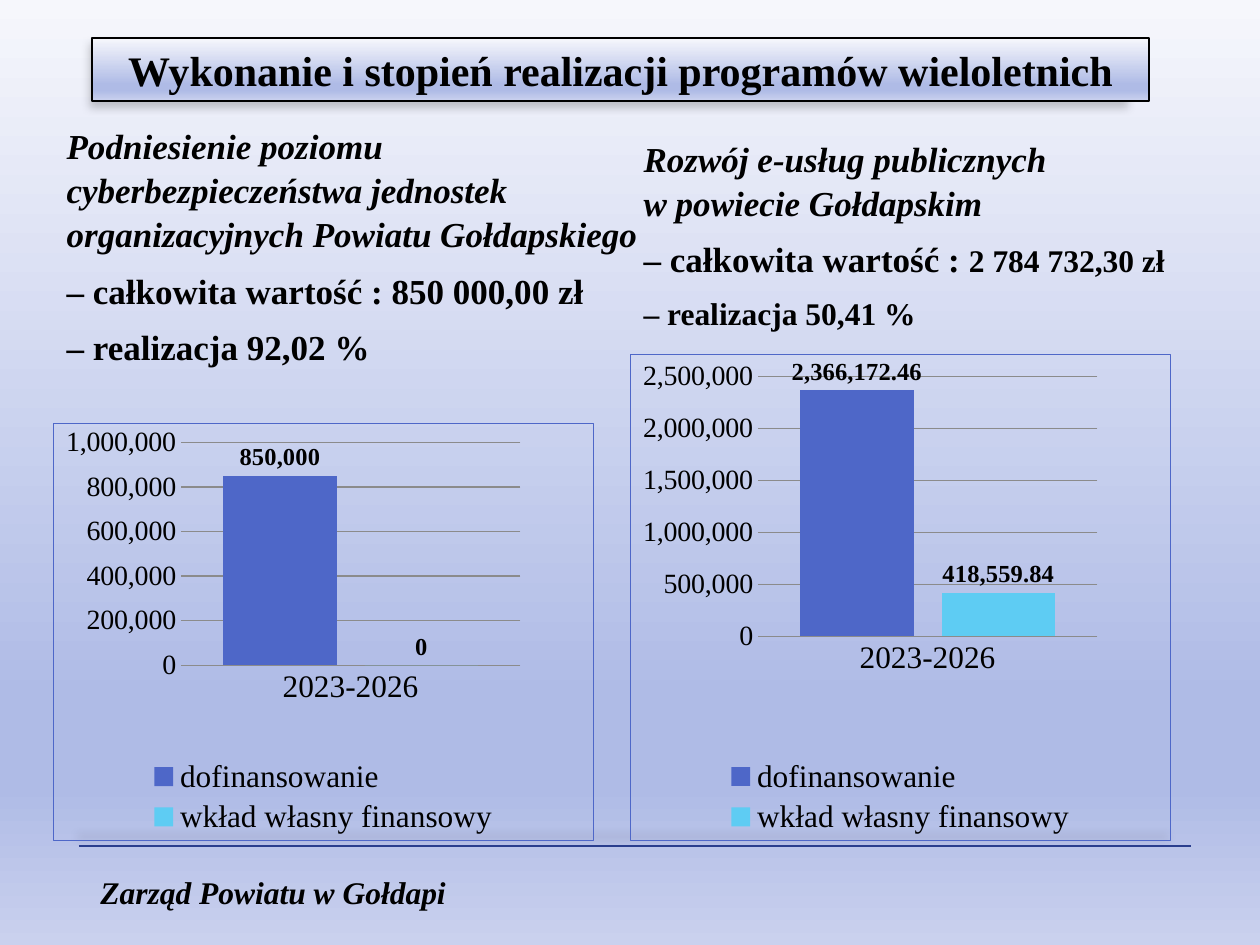
from lxml import etree
from pptx import Presentation
from pptx import util as u
from pptx.chart.data import CategoryChartData
from pptx.dml.color import RGBColor
from pptx.enum import chart as charts, shapes, text
from pptx.oxml import parse_xml
from pptx.oxml.ns import nsdecls, qn

PX = 914400 / 126
FONT = "Times New Roman"
BLACK, BLUE, CYAN, NAVY, GREY = "000000", "4E67C8", "5ECCF3", "2A3E8E", "8B8B8B"
STOPS = [(0, "F6F7FC"), (74, "AFBBE6"), (83, "AFBBE6"), (100, "CAD1EE")]
PLOT = {"x": 0.236, "y": 0.045, "w": 0.629, "h": 0.535}


def px(value):
    return u.Emu(round(value * PX))


def colour(code):
    return RGBColor.from_string(code)


def place(shape, left, top, width, height):
    shape.left, shape.top, shape.width, shape.height = map(px, (left, top, width, height))


def style_font(font, size, bold=False, italic=False):
    font.name, font.size, font.bold, font.italic = FONT, u.Pt(size), bold, italic
    font.color.rgb = colour(BLACK)


def style_line(line, code, width):
    line.color.rgb = colour(code)
    line.width = u.Pt(width)


def paint_gradient(fill, element):
    fill.gradient()
    fill.gradient_angle = 270
    stop_list = element.find(".//" + qn("a:gsLst"))
    for stop in list(stop_list):
        stop_list.remove(stop)
    for position, code in STOPS:
        stop = etree.SubElement(stop_list, qn("a:gs"), pos=str(position * 1000))
        etree.SubElement(stop, qn("a:srgbClr"), val=code)


def add_shadow(shape):
    shape._element.spPr.append(parse_xml(
        f'<a:effectLst {nsdecls("a")}><a:outerShdw blurRad="63500" dist="50800" dir="5400000" '
        'sx="98000" sy="98000" algn="ctr" rotWithShape="0"><a:srgbClr val="000000">'
        '<a:alpha val="20000"/></a:srgbClr></a:outerShdw></a:effectLst>'))


def fill_title(title, wording):
    place(title, 92, 38, 1057, 63)
    paint_gradient(title.fill, title._element)
    style_line(title.line, BLACK, 0.75)
    add_shadow(title)
    title.text_frame.text = wording
    title.text_frame.auto_size = text.MSO_AUTO_SIZE.NONE
    para = title.text_frame.paragraphs[0]
    para.alignment = text.PP_ALIGN.CENTER
    style_font(para.runs[0].font, 24, bold=True)


def fill_body(body, box, paragraphs):
    place(body, *box)
    frame = body.text_frame
    frame.auto_size = text.MSO_AUTO_SIZE.NONE
    frame.vertical_anchor = text.MSO_ANCHOR.BOTTOM
    for index, (italic, spans) in enumerate(paragraphs):
        para = frame.paragraphs[0] if index == 0 else frame.add_paragraph()
        properties = para._p.get_or_add_pPr()
        properties.set("marL", "0")
        properties.set("indent", "0")
        etree.SubElement(properties, qn("a:buNone"))
        para.alignment = text.PP_ALIGN.LEFT
        para.line_spacing = 1.05
        para.space_before = u.Pt(4 if index else 0)
        para.space_after = u.Pt(3)
        for wording, size in spans:
            for number, line in enumerate(wording.split("\n")):
                if number:
                    para.add_line_break()
                span = para.add_run()
                span.text = line
                style_font(span.font, size, bold=True, italic=italic)


def add_label(slide, box, wording):
    label = slide.shapes.add_textbox(*map(px, box))
    label.text_frame.word_wrap = True
    label.text_frame.text = wording
    style_font(label.text_frame.paragraphs[0].runs[0].font, 18, bold=True, italic=True)


def add_rule(slide, left, right, top):
    rule = slide.shapes.add_connector(
        shapes.MSO_CONNECTOR.STRAIGHT, px(left), px(top), px(right), px(top))
    style_line(rule.line, NAVY, 1.25)
    add_shadow(rule)


def set_plot_layout(chart):
    area = chart._chartSpace.chart.plotArea
    for old in area.findall(qn("c:layout")):
        area.remove(old)
    layout = etree.Element(qn("c:layout"))
    manual = etree.SubElement(layout, qn("c:manualLayout"))
    etree.SubElement(manual, qn("c:layoutTarget"), val="inner")
    for side in "xy":
        etree.SubElement(manual, qn(f"c:{side}Mode"), val="edge")
    for side, share in PLOT.items():
        etree.SubElement(manual, qn(f"c:{side}"), val=str(share))
    area.insert(0, layout)


def add_border(chart):
    chart._chartSpace.find(qn("c:txPr")).addprevious(parse_xml(
        f'<c:spPr {nsdecls("c", "a")}><a:noFill/><a:ln w="9525"><a:solidFill>'
        f'<a:srgbClr val="{BLUE}"/></a:solidFill></a:ln></c:spPr>'))


def style_axes(chart, maximum, step):
    category, value = chart.category_axis, chart.value_axis
    for axis, size in ((category, 18), (value, 16)):
        axis.major_tick_mark = axis.minor_tick_mark = charts.XL_TICK_MARK.NONE
        style_font(axis.tick_labels.font, size)
    style_line(category.format.line, GREY, 0.75)
    value.format.line.fill.background()
    value.minimum_scale, value.maximum_scale, value.major_unit = 0, maximum, step
    value.tick_labels.number_format = "#,##0"
    value.tick_labels.number_format_is_linked = False
    value.has_major_gridlines = True
    style_line(value.major_gridlines.format.line, GREY, 0.75)


def add_funding_chart(slide, box, values, maximum, step, label_format):
    data = CategoryChartData()
    data.categories = ["2023-2026"]
    for name, value in zip(("dofinansowanie", "wkład własny finansowy"), values):
        data.add_series(name, [value])
    chart = slide.shapes.add_chart(
        charts.XL_CHART_TYPE.COLUMN_CLUSTERED, *map(px, box), data).chart
    chart.has_title = False
    style_font(chart.font, 10)
    add_border(chart)
    set_plot_layout(chart)
    style_axes(chart, maximum, step)
    chart.has_legend = True
    chart.legend.position = charts.XL_LEGEND_POSITION.BOTTOM
    chart.legend.include_in_layout = False
    style_font(chart.legend.font, 18)
    plot = chart.plots[0]
    plot.vary_by_categories = False
    plot.gap_width, plot.overlap = 75, -25
    for series, code in zip(plot.series, (BLUE, CYAN)):
        series.format.fill.solid()
        series.format.fill.fore_color.rgb = colour(code)
        labels = series.data_labels
        labels.show_value = True
        labels.position = charts.XL_LABEL_POSITION.OUTSIDE_END
        labels.number_format = label_format
        labels.number_format_is_linked = False
        style_font(labels.font, 14, bold=True)


def main():
    deck = Presentation()
    deck.slide_width, deck.slide_height = px(1260), px(945)
    slide = deck.slides.add_slide(deck.slide_layouts[3])
    paint_gradient(slide.background.fill, slide._element)
    title, left_body, right_body = slide.placeholders
    fill_title(title, "Wykonanie i stopień realizacji programów wieloletnich")
    fill_body(left_body, (54, 132, 635, 242), [
        (True, [("Podniesienie poziomu cyberbezpieczeństwa jednostek "
                 "organizacyjnych Powiatu Gołdapskiego", 20)]),
        (False, [("– całkowita wartość : 850 000,00 zł", 20)]),
        (False, [("– realizacja 92,02 %", 20)]),
    ])
    fill_body(right_body, (631, 103, 560, 235), [
        (True, [("Rozwój e-usług publicznych\nw powiecie Gołdapskim", 20)]),
        (False, [("– całkowita wartość : ", 20), ("2 784 732,30 zł", 18)]),
        (False, [("– realizacja 50,41 %", 18)]),
    ])
    add_rule(slide, 79, 1191, 846)
    add_label(slide, (88, 867, 512, 50), "Zarząd Powiatu w Gołdapi")
    add_funding_chart(slide, (53, 423, 541, 418), (850000, 0), 1000000, 200000, "#,##0")
    add_funding_chart(slide, (630, 354, 541, 487), (2366172.46, 418559.84),
                      2500000, 500000, "#,##0.00")
    deck.save("out.pptx")


if __name__ == "__main__":
    main()
